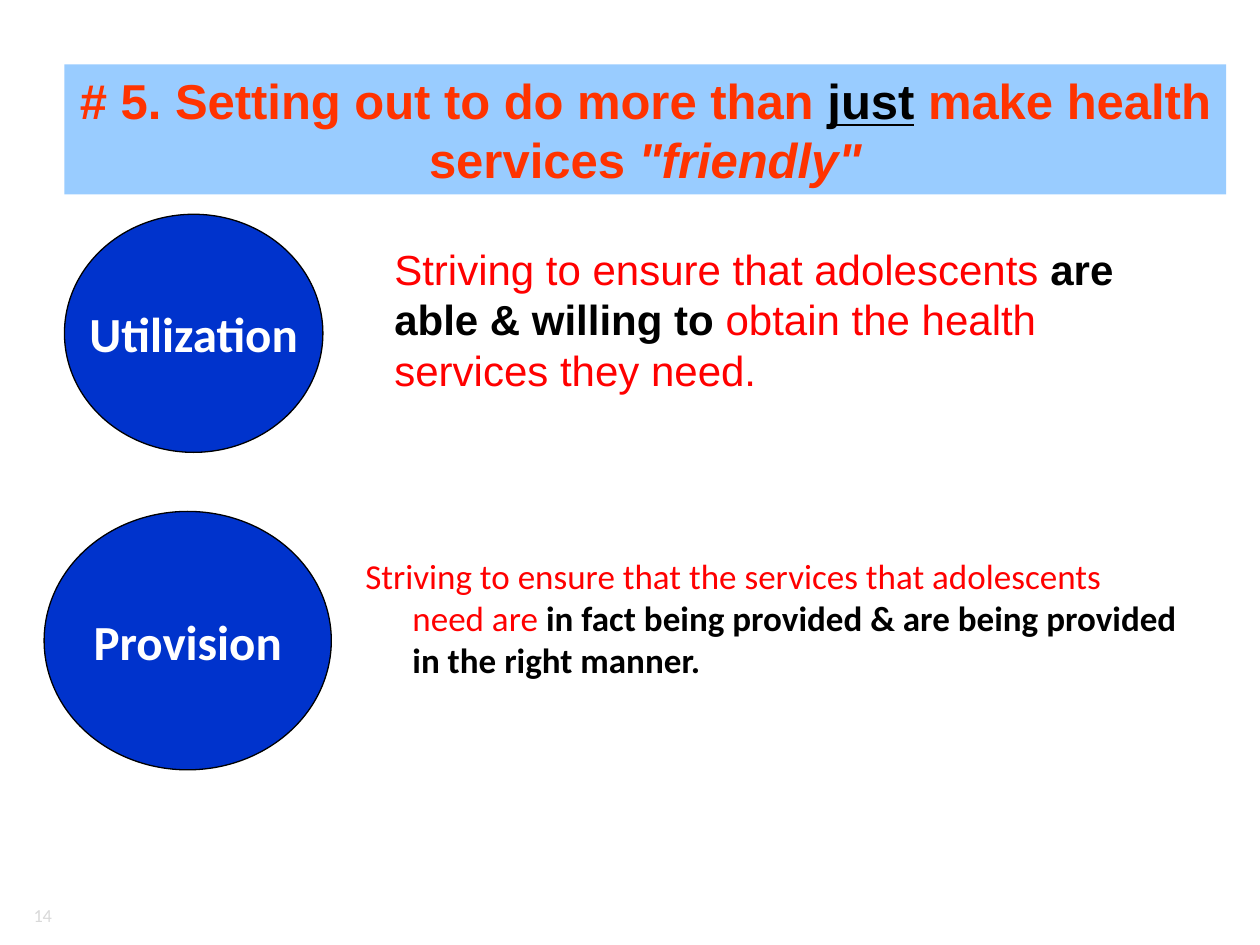
import pptx
import pptx.dml.color
import pptx.enum.shapes
import pptx.enum.text
import pptx.oxml.ns
import pptx.util
from lxml import etree
from pptx.util import Cm

RGBColor = pptx.dml.color.RGBColor
ALIGN = pptx.enum.text.PP_ALIGN
ANCHOR = pptx.enum.text.MSO_ANCHOR

BLACK = RGBColor(0x00, 0x00, 0x00)
WHITE = RGBColor(0xFF, 0xFF, 0xFF)
RED = RGBColor(0xFF, 0x00, 0x00)
ORANGE = RGBColor(0xFF, 0x33, 0x00)
SKY = RGBColor(0x99, 0xCC, 0xFF)
BLUE = RGBColor(0x00, 0x33, 0xCC)
GRAY = RGBColor(0xD9, 0xD9, 0xD9)

# Each run: its text and what differs from the format of its box
HEADING = [
    ("# 5. Setting out to do more than ", {}),
    ("just", {"color": BLACK, "underline": True}),
    (" make health services ", {}),
    ('"friendly"', {"italic": True}),
]
UTILIZATION = [
    ("Striving to ensure that adolescents ", {}),
    ("are able & willing to", {"color": BLACK, "bold": True}),
    (" obtain the health services they need.", {}),
]
PROVISION = [
    ("Striving to ensure that the services that adolescents need are ", {}),
    ("in fact being provided & are being provided in the right manner.",
     {"color": BLACK, "bold": True}),
]
PAGE_NUMBER = "14"

# Left, top, width, height in cm
HEADING_BOX = (1.3, 1.3, 23.42, 2.62)
UTILIZATION_BOX = (7.7, 4.78, 16.43, 4.32)
PROVISION_BOX = (7.11, 11.05, 16.92, 3.68)
PAGE_NUMBER_BOX = (0.3, 18.14, 1, 0.6)
CIRCLES = [
    ("Provision", (0.89, 10.31, 5.79, 5.21)),
    ("Utilization", (1.3, 4.32, 5.21, 4.8)),
]


def write(shape, text, *, size, color, font="Calibri", bold=False,
          align=ALIGN.LEFT, anchor=ANCHOR.TOP, wrap=True, hanging=0):
    """Fill a shape with one paragraph, given as a string or a list of runs."""
    frame = shape.text_frame
    frame.auto_size = pptx.enum.text.MSO_AUTO_SIZE.NONE
    frame.word_wrap = wrap
    frame.vertical_anchor = anchor
    paragraph = frame.paragraphs[0]
    paragraph.alignment = align
    paragraph.space_before = pptx.util.Pt(0)
    if hanging:
        properties = paragraph._p.get_or_add_pPr()
        properties.set("marL", str(Cm(hanging)))
        properties.set("indent", str(-Cm(hanging)))
        etree.SubElement(properties, pptx.oxml.ns.qn("a:buNone"))
    for words, changes in [(text, {})] if isinstance(text, str) else text:
        run = paragraph.add_run()
        run.text = words
        run.font.name = font
        run.font.size = pptx.util.Pt(size)
        run.font.color.rgb = changes.get("color", color)
        run.font.bold = changes.get("bold", bold)
        run.font.italic = changes.get("italic", False)
        run.font.underline = changes.get("underline", False)


def place(shape, box):
    shape.left, shape.top, shape.width, shape.height = map(Cm, box)


def main():
    deck = pptx.Presentation()
    deck.slide_width, deck.slide_height = Cm(25.4), Cm(19.05)
    slide = deck.slides.add_slide(deck.slide_layouts[1])
    heading, provision = slide.placeholders

    page_number = slide.shapes.add_textbox(*map(Cm, PAGE_NUMBER_BOX))
    write(page_number, PAGE_NUMBER, size=10.5, color=GRAY,
          align=ALIGN.RIGHT, anchor=ANCHOR.MIDDLE)

    place(provision, PROVISION_BOX)
    write(provision, PROVISION, size=20, color=RED, hanging=0.95)

    for label, box in CIRCLES:
        circle = slide.shapes.add_shape(
            pptx.enum.shapes.MSO_SHAPE.OVAL, *map(Cm, box))
        circle.shadow.inherit = False
        circle.fill.solid()
        circle.fill.fore_color.rgb = BLUE
        circle.line.color.rgb = BLACK
        circle.line.width = pptx.util.Pt(0.75)
        write(circle, label, size=28, color=WHITE, bold=True,
              align=ALIGN.CENTER, anchor=ANCHOR.MIDDLE, wrap=False)

    utilization = slide.shapes.add_textbox(*map(Cm, UTILIZATION_BOX))
    write(utilization, UTILIZATION, size=24, color=RED, font="Arial")

    place(heading, HEADING_BOX)
    heading.fill.solid()
    heading.fill.fore_color.rgb = SKY
    write(heading, HEADING, size=28, color=ORANGE, font="Arial", bold=True,
          align=ALIGN.CENTER)

    deck.save("out.pptx")


if __name__ == "__main__":
    main()
